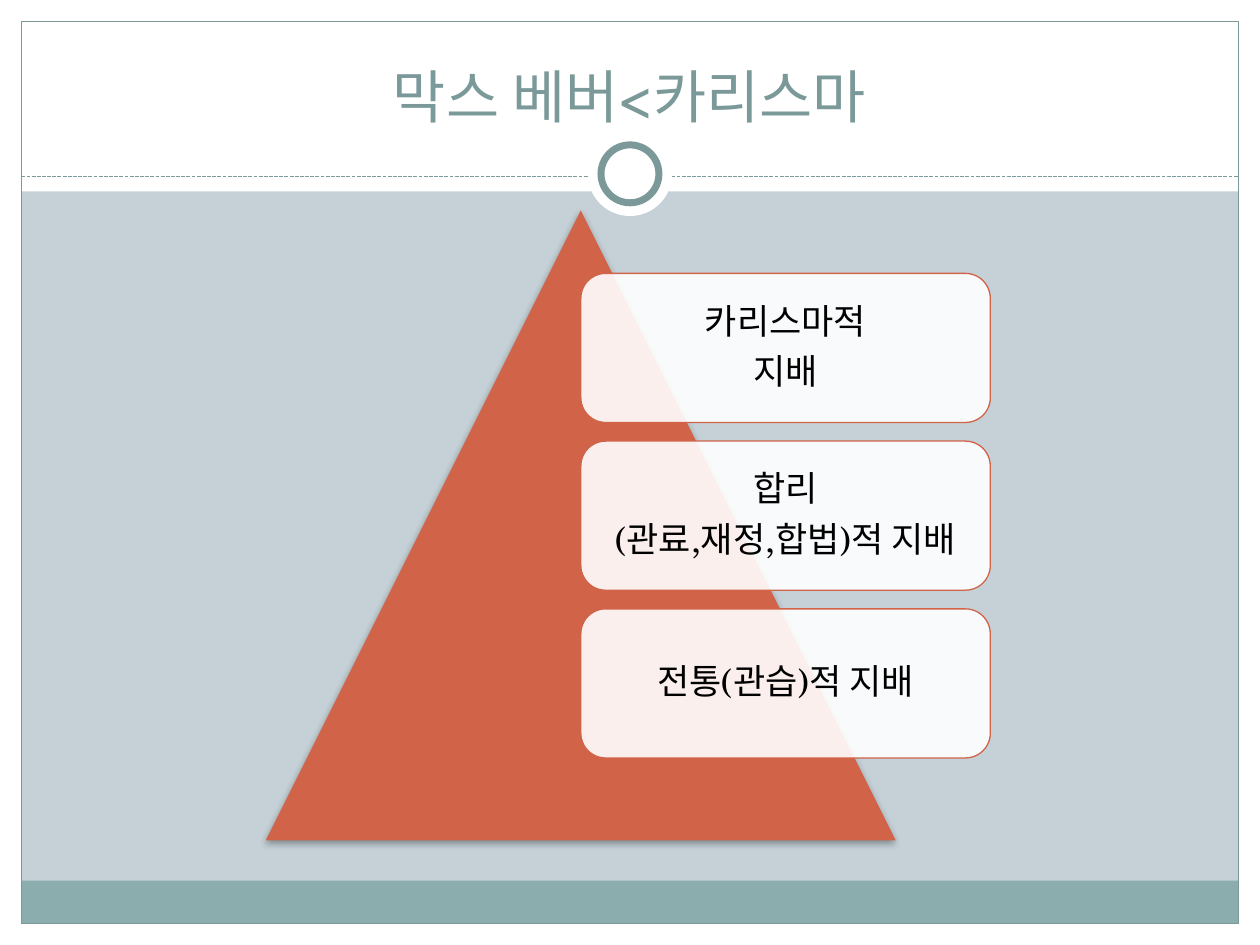
from lxml.etree import SubElement as Sub
from pptx import Presentation
from pptx.dml.color import RGBColor
from pptx.enum.dml import MSO_LINE as Dash
from pptx.enum.shapes import MSO_CONNECTOR as Link, MSO_SHAPE as Kind
from pptx.enum.text import MSO_ANCHOR as Anchor, PP_ALIGN as Align
from pptx.oxml import parse_xml
from pptx.oxml.ns import nsdecls, qn
from pptx.util import Inches, Pt

FONT = "TeX Gyre Schola"
WHITE, TEAL, RUST = "FFFFFF", "7C999A", "D16349"


def paint(part, tone):
    """Give a fill or font a solid hex colour."""
    if hasattr(part, "solid"):
        part.solid()
        part.fore_color.rgb = RGBColor.from_string(tone)
    else:
        part.color.rgb = RGBColor.from_string(tone)


def draw(slide, kind, box, fill=None, line=None, width=0.75):
    """Add a flat preset shape in a box given in inches."""
    shape = slide.shapes.add_shape(kind, *map(Inches, box))
    shape.shadow.inherit = False
    if fill:
        paint(shape.fill, fill)
    else:
        shape.fill.background()
    if line:
        paint(shape.line.fill, line)
        shape.line.width = Pt(width)
    else:
        shape.line.fill.background()
    return shape


def write(frame, lines, size, tone, anchor):
    """Fill a text frame with centred paragraphs."""
    frame.word_wrap = True
    frame.vertical_anchor = anchor
    frame.text = "\n".join(lines)
    for para in frame.paragraphs:
        para.alignment = Align.CENTER
        para.font.name = FONT
        para.font.size = Pt(size)
        paint(para.font, tone)


def add_frame(slide, box):
    """Draw the margins, footer band, border, dashed rule and ring."""
    left, top, wide, high = box
    edge, head, rule = 0.17, 1.52, 1.4
    right, base = left + wide - edge, top + high - edge
    for bar in [(left, base, wide, edge), (left, top, wide, head),
                (left, top, edge, high), (right, top, edge, high)]:
        draw(slide, Kind.RECTANGLE, bar, WHITE)
    inner = wide - 2 * edge
    draw(slide, Kind.RECTANGLE, (left + edge, base - 0.34, inner, 0.34), "8CADAE")
    draw(slide, Kind.RECTANGLE,
         (left + edge, top + edge, inner, high - 2 * edge), None, TEAL)
    ends = left + edge, top + rule, right, top + rule
    link = slide.shapes.add_connector(Link.STRAIGHT, *map(Inches, ends))
    paint(link.line.fill, TEAL)
    link.line.width = Pt(0.75)
    link.line.dash_style = Dash.SQUARE_DOT
    Sub(link._element.spPr, qn("a:effectLst"))
    for size, line in [(0.67, None), (0.46, TEAL)]:
        spot = left + (wide - size) / 2, top + 1.38 - size / 2, size, size
        draw(slide, Kind.OVAL, spot, WHITE, line, 4)


def add_title(slide, box, text):
    """Place the title placeholder above the frame shapes."""
    title = slide.shapes.title
    title.left, title.top, title.width, title.height = map(Inches, box)
    write(title.text_frame, [text], 33, TEAL, Anchor.BOTTOM)
    slide.shapes._spTree.append(title._element)


def add_pyramid(slide, box, cards):
    """Draw a triangle with a column of cards from its middle axis."""
    left, top, wide, high = box
    peak = draw(slide, Kind.ISOSCELES_TRIANGLE, box, RUST)
    props = peak._element.spPr
    props.remove(props.find(qn("a:effectLst")))
    props.append(parse_xml(
        f'<a:effectLst {nsdecls("a")}><a:outerShdw blurRad="{Pt(4)}" '
        f'dist="{Pt(2)}" dir="5400000" rotWithShape="0"><a:srgbClr val="000000">'
        '<a:alpha val="35000"/></a:srgbClr></a:outerShdw></a:effectLst>'))
    tall = high * 0.71 / 3
    step = tall * 9 / 8
    for row, lines in enumerate(cards):
        spot = left + wide / 2, top + high / 10 + row * step, wide * 0.65, tall
        card = draw(slide, Kind.ROUNDED_RECTANGLE, spot, WHITE, RUST)
        tint = card._element.spPr.find(qn("a:solidFill"))[0]
        Sub(tint, qn("a:alpha"), val="90000")
        frame = card.text_frame
        frame.margin_left = frame.margin_right = Inches(0.02)
        frame.margin_top = frame.margin_bottom = Inches(0.02)
        write(frame, lines, 20, "000000", Anchor.MIDDLE)
        for para in frame.paragraphs:
            para.line_spacing = 0.9
            para.space_after = Pt(7)


def main():
    """Build and save the slide."""
    deck = Presentation()
    deck.slide_width, deck.slide_height = Inches(10), Inches(7.5)
    slide = deck.slides.add_slide(deck.slide_layouts[5])
    paint(slide.background.fill, "C5D1D7")
    add_frame(slide, (0, 0, 10, 7.5))
    add_title(slide, (0.33, 0.25, 9.33, 0.83), "막스 베버<카리스마")
    add_pyramid(slide, (2.11, 1.67, 5, 5), [
        ["카리스마적", "지배"],
        ["합리", "(관료,재정,합법)적 지배"],
        ["전통(관습)적 지배"],
    ])
    deck.save("out.pptx")


if __name__ == "__main__":
    main()
